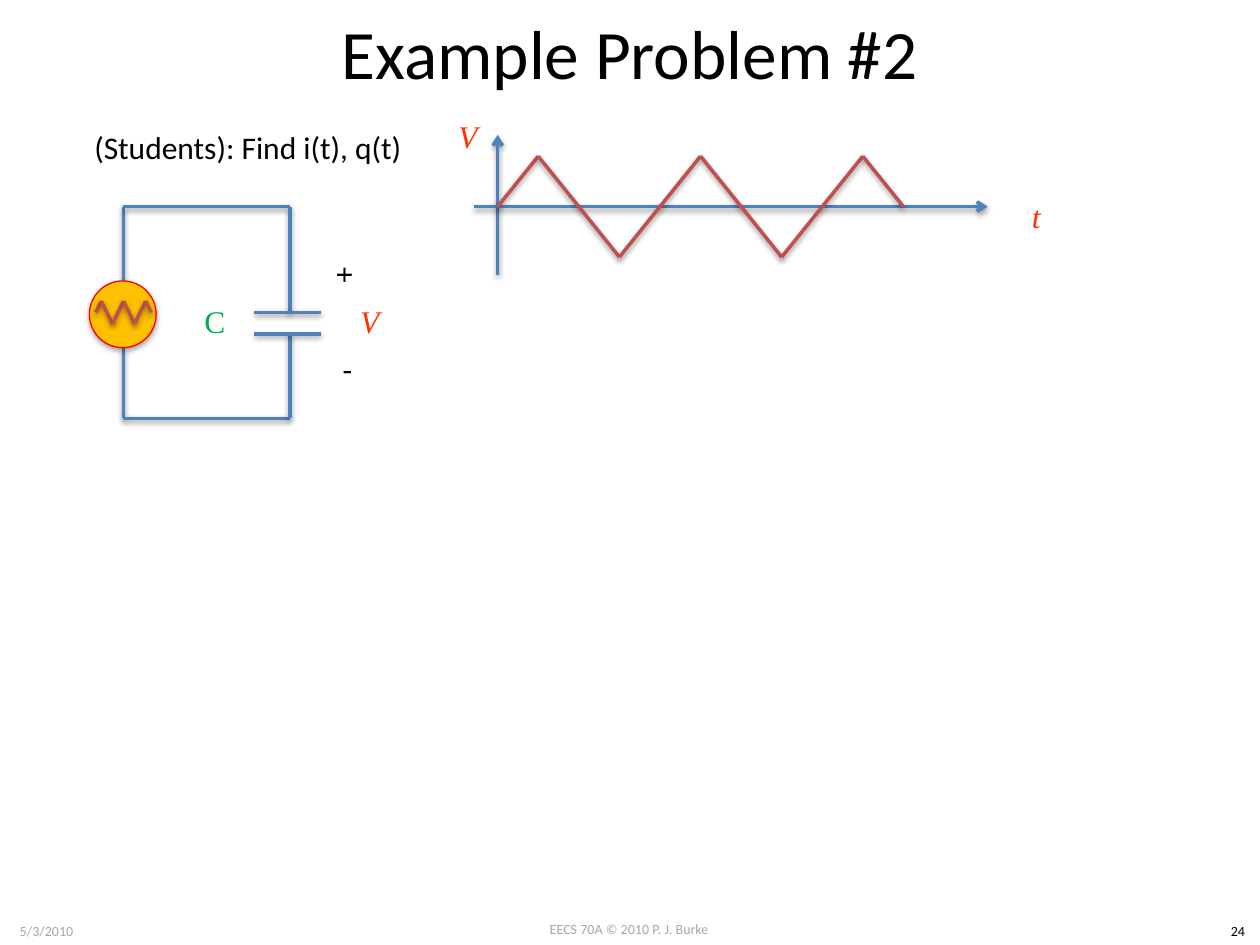
"""Build the capacitor example slide: a circuit and its triangular voltage plot."""
from itertools import pairwise

from lxml import etree
from pptx import Presentation
from pptx.dml.color import RGBColor
from pptx.enum.shapes import MSO_CONNECTOR, MSO_SHAPE
from pptx.enum.text import MSO_ANCHOR, PP_ALIGN
from pptx.oxml import parse_xml
from pptx.oxml.ns import qn
from pptx.util import Inches, Pt

STRAIGHT, OVAL = MSO_CONNECTOR.STRAIGHT, MSO_SHAPE.OVAL
LEFT, CENTER = PP_ALIGN.LEFT, PP_ALIGN.CENTER
TOP, MIDDLE = MSO_ANCHOR.TOP, MSO_ANCHOR.MIDDLE
BLACK = RGBColor(0x00, 0x00, 0x00)
GRAY = RGBColor(0xA6, 0xA6, 0xA6)
BLUE = RGBColor(0x4F, 0x81, 0xBD)
BRICK = RGBColor(0xC0, 0x50, 0x4D)
GREEN = RGBColor(0x00, 0xB0, 0x50)
ORANGE = RGBColor(0xFF, 0x33, 0x00)
AMBER = RGBColor(0xFF, 0xC0, 0x00)
RED = RGBColor(0xFF, 0x00, 0x00)
SERIF = "Times New Roman"
SHADOW = (
    '<a:effectLst xmlns:a="http://schemas.openxmlformats.org/drawingml/2006/main">'
    '<a:outerShdw blurRad="40000" dist="{}" dir="5400000" rotWithShape="0">'
    '<a:srgbClr val="000000"><a:alpha val="{}"/></a:srgbClr>'
    "</a:outerShdw></a:effectLst>"
)

presentation = Presentation()
presentation.slide_width, presentation.slide_height = Inches(10), Inches(7.5)
slide = presentation.slides.add_slide(presentation.slide_layouts[6])
CELL = presentation.slide_width / 100


def add_text(text, column, row, columns, rows, size=18, color=BLACK, font="Calibri",
             italic=False, align=CENTER, anchor=TOP, wrap=True, rotation=0):
    box = slide.shapes.add_textbox(*(round(n * CELL) for n in (column, row, columns, rows)))
    box.rotation = rotation
    frame = box.text_frame
    frame.word_wrap, frame.vertical_anchor = wrap, anchor
    paragraph = frame.paragraphs[0]
    paragraph.alignment = align
    run = paragraph.add_run()
    run.text = text
    run.font.name, run.font.size, run.font.italic = font, Pt(size), italic
    run.font.color.rgb = color


def add_path(points, color=BLUE, arrow=False):
    for start, end in pairwise(points):
        line = slide.shapes.add_connector(STRAIGHT, *(round(n * CELL) for n in start + end))
        line.line.color.rgb, line.line.width = color, Pt(2)
        properties = line._element.spPr
        if arrow:
            etree.SubElement(properties.find(qn("a:ln")), qn("a:tailEnd"), type="arrow")
        properties.append(parse_xml(SHADOW.format(20000, 38000)))


add_text("EECS 70A © 2010 P. J. Burke", 38.3, 72.6, 23.3, 2.4, size=8, color=GRAY)
add_text("5/3/2010", 0, 72.7, 7.4, 2.4, size=8, color=GRAY)
add_text("24", 96.5, 72.7, 3.5, 2.4, size=8)
add_text("Example Problem #2", 5, 0, 90, 8.3, size=39.6, anchor=MIDDLE)
add_text("(Students): Find i(t), q(t)", 6.5, 9.7, 26.7, 4, align=LEFT, wrap=False)

wire_left, wire_right, wire_top, wire_bottom = 9.8, 23, 16.4, 33.2
source_top, source_size = 22.3, 5.3
plate_top, plate_bottom = 24.8, 26.5
add_path([(wire_left, source_top), (wire_left, wire_top),
          (wire_right, wire_top), (wire_right, plate_top)])
add_path([(wire_left, source_top + source_size), (wire_left, wire_bottom),
          (wire_right, wire_bottom), (wire_right, plate_bottom)])
for plate in (plate_top, plate_bottom):
    add_path([(25.5, plate), (20.2, plate)])

add_text("C", 11.1, 21.8, 11.9, 7.3, color=GREEN, font=SERIF, anchor=MIDDLE)
add_text("+", 25.9, 19.9, 3.3, 4, align=LEFT, wrap=False, rotation=90)
add_text("-", 26.2, 27.3, 2.8, 4, align=LEFT, wrap=False)

source = slide.shapes.add_shape(
    OVAL, *(round(n * CELL) for n in (7.1, source_top, source_size, source_size)))
source.fill.solid()
source.fill.fore_color.rgb = AMBER
source.line.color.rgb, source.line.width = RED, Pt(0.75)
source._element.spPr.append(parse_xml(SHADOW.format(23000, 35000)))

axis_left, axis_row = 39.5, 16.4
add_path([(axis_left, 21.8), (axis_left, 10.7)], arrow=True)
add_path([(37.6, axis_row), (78.4, axis_row)], arrow=True)
for symbol, column, row in (("V", 25.5, 22.4), ("V", 33.3, 7.7), ("t", 78.4, 14.1)):
    add_text(symbol, column, row, 7.7, 6.1, color=ORANGE, font=SERIF, italic=True, anchor=MIDDLE)

quarters = (0, 1, 3, 5, 7, 9, 10)
heights = (0, -1, 1, -1, 1, -1, 0)
for column, row, quarter, amplitude in ((7.6, 24.8, 0.44, 0.9), (axis_left, axis_row, 3.22, 4)):
    add_path([(column + quarter * step, row + amplitude * height)
              for step, height in zip(quarters, heights)], color=BRICK)

presentation.save("out.pptx")
